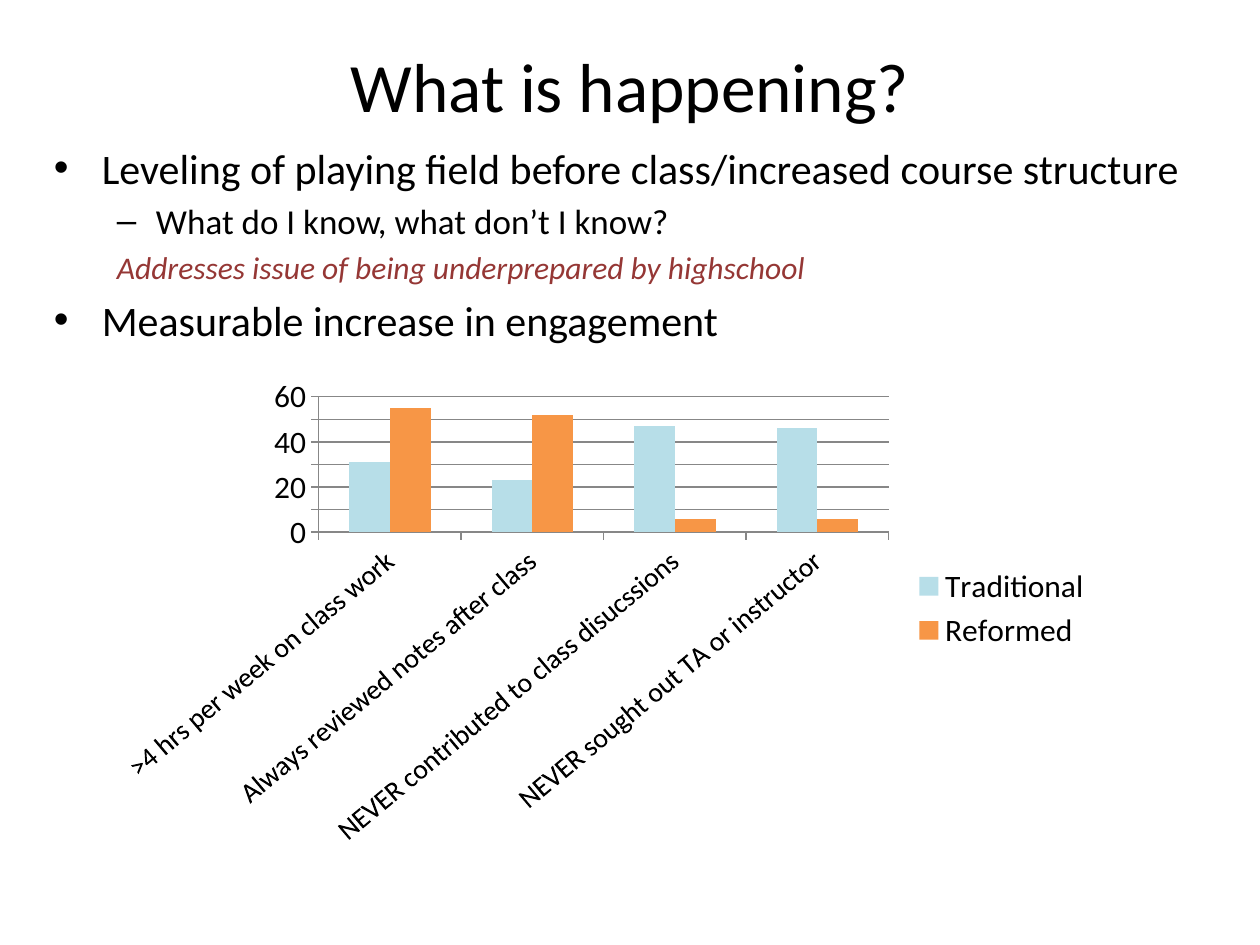
from lxml.etree import SubElement
from pptx import Presentation
from pptx.chart.data import CategoryChartData
from pptx.dml.color import RGBColor
from pptx.enum.chart import XL_CHART_TYPE as ChartType, XL_LEGEND_POSITION as LegendSide, XL_TICK_MARK as Tick
from pptx.enum.text import MSO_ANCHOR as Anchor, PP_ALIGN as Align
from pptx.oxml.ns import qn
from pptx.util import Inches, Pt


def style(font, size, color="000000", italic=False):
    font.name, font.size, font.italic = "Calibri", Pt(size), italic
    font.color.rgb = RGBColor.from_string(color)


def place(element, position, **shares):
    for old in element.findall(qn("c:layout")):
        element.remove(old)
    layout = SubElement(element, qn("c:layout"))
    element.insert(position, layout)
    manual = SubElement(layout, qn("c:manualLayout"))
    for tag, value in shares.items():
        SubElement(manual, qn(f"c:{tag}")).set("val", str(value))


deck = Presentation()
deck.slide_width, deck.slide_height = Inches(10), Inches(7.5)
W, H = deck.slide_width, deck.slide_height
slide = deck.slides.add_slide(deck.slide_layouts[6])

title = slide.shapes.add_textbox(int(W * 0.05), int(H * 0.04), int(W * 0.9), int(H * 0.1)).text_frame
title.word_wrap = True
title.vertical_anchor = Anchor.MIDDLE
title.text = "What is happening?"
title.paragraphs[0].alignment = Align.CENTER
style(title.paragraphs[0].runs[0].font, 39.6)

points = [
    ("Leveling of playing field before class/increased course structure", 0, 24, "000000", "•", 0.38, -0.38),
    ("What do I know, what don’t I know?", 1, 20, "000000", "–", 0.81, -0.31),
    ("Addresses issue of being underprepared by highschool", 1, 18, "953735", None, 0.5, 0),
    ("Measurable increase in engagement", 0, 24, "000000", "•", 0.38, -0.38),
]
body = slide.shapes.add_textbox(int(W * 0.033), int(H * 0.144), int(W * 0.95), int(H * 0.37)).text_frame
body.word_wrap = True
body.text = "\n".join(point[0] for point in points)
for paragraph, (_, level, size, color, bullet, margin, indent) in zip(body.paragraphs, points):
    paragraph.level = level
    paragraph.space_before = Pt(size * 0.2)
    style(paragraph.runs[0].font, size, color, italic=bullet is None)
    properties = paragraph.runs[0].font._element.getparent().getparent().get_or_add_pPr()
    properties.set("marL", str(Inches(margin)))
    properties.set("indent", str(Inches(indent)))
    if bullet:
        SubElement(properties, qn("a:buFont")).set("typeface", "Arial")
        SubElement(properties, qn("a:buChar")).set("char", bullet)
    else:
        SubElement(properties, qn("a:buNone"))

engagement = CategoryChartData()
engagement.categories = [
    ">4 hrs per week on class work",
    "Always reviewed notes after class",
    "NEVER contributed to class disucssions",
    "NEVER sought out TA or instructor",
]
engagement.add_series("Traditional", (31, 23, 47, 46))
engagement.add_series("Reformed", (55, 52, 6, 6))
chart = slide.shapes.add_chart(
    ChartType.COLUMN_CLUSTERED, int(W * 0.067), int(H * 0.4), int(W * 0.808), int(H * 0.516), engagement
).chart
style(chart.font, 18)
chart.has_title = False

columns = chart.plots[0]
columns.gap_width, columns.overlap, columns.vary_by_categories = 150, 0, False
for series, color in zip(columns.series, ("B7DEE8", "F79646")):
    series.format.fill.solid()
    series.format.fill.fore_color.rgb = RGBColor.from_string(color)

habits, percent = chart.category_axis, chart.value_axis
percent.minimum_scale, percent.maximum_scale, percent.major_unit = 0, 60, 10
percent.has_major_gridlines = True
for axis, size in ((habits, 16), (percent, 18)):
    axis.major_tick_mark = Tick.OUTSIDE
    style(axis.tick_labels.font, size)
for line in (habits.format.line, percent.format.line, percent.major_gridlines.format.line):
    line.color.rgb = RGBColor.from_string("878787")
    line.width = Pt(0.75)
habits._element.find(qn("c:txPr")).find(qn("a:bodyPr")).set("rot", str(-40 * 60000))

chart.has_legend = True
chart.legend.position = LegendSide.RIGHT
chart.legend.include_in_layout = False
style(chart.legend.font, 18)
place(chart.legend._element, 1, xMode="edge", yMode="edge", x=0.81, y=0.37)
place(columns._element.getparent(), 0, layoutTarget="inner", xMode="edge", yMode="edge", x=0.23, y=0.03, w=0.56, h=0.28)

deck.save("out.pptx")
